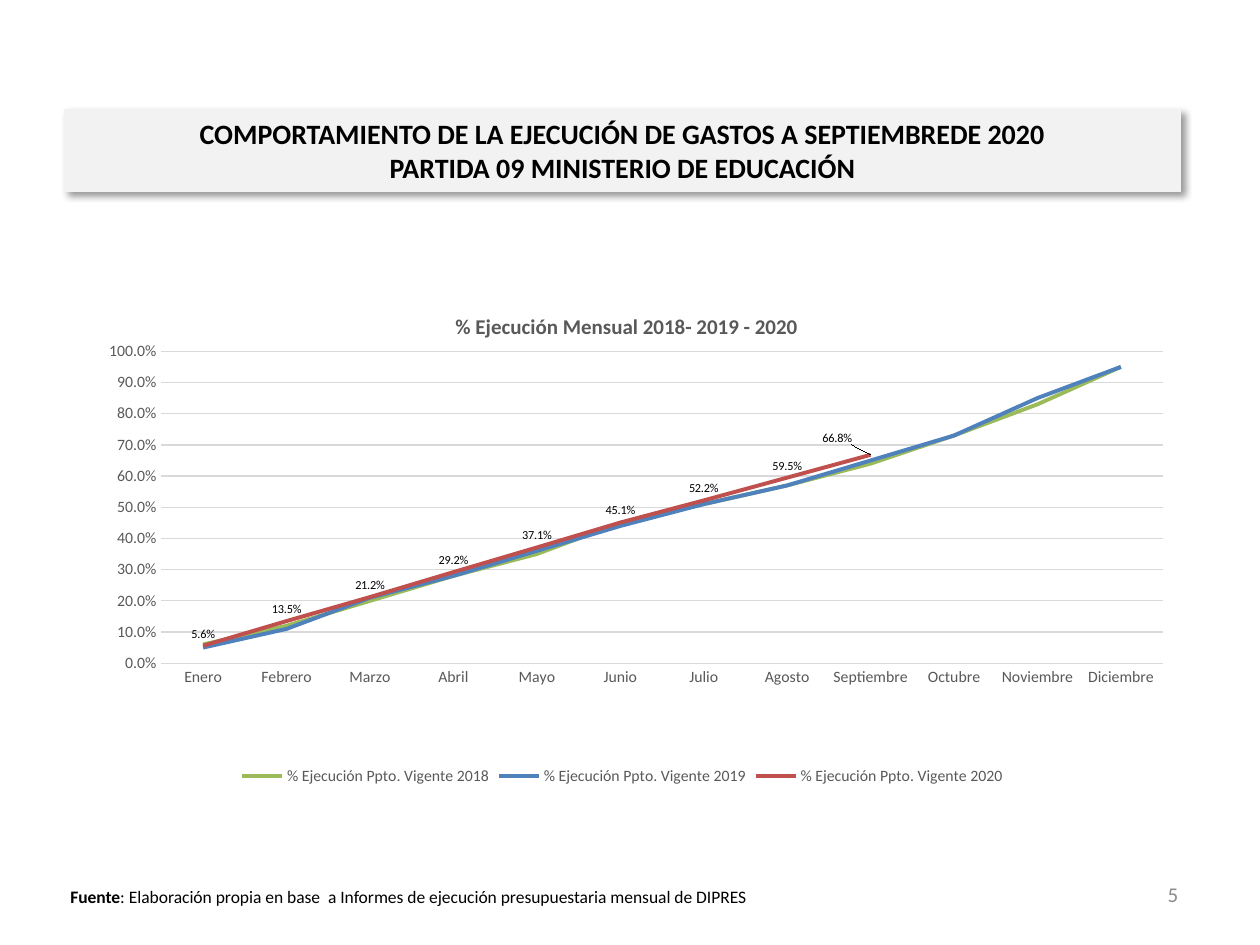
from dataclasses import dataclass

import pptx
import pptx.chart.data
import pptx.dml.color
import pptx.enum.chart
import pptx.enum.text
import pptx.oxml
import pptx.oxml.ns
import pptx.util
from pptx.util import Inches

RGB = pptx.dml.color.RGBColor.from_string
qn = pptx.oxml.ns.qn


@dataclass(frozen=True)
class Theme:
    font: str = "Calibri"
    ink: str = "000000"
    muted: str = "595959"
    number: str = "8C8C8C"
    band: str = "F2F2F2"
    grid: str = "D9D9D9"
    title_pt: int = 16
    chart_title_pt: int = 12
    number_pt: int = 12
    source_pt: int = 10
    axis_pt: int = 9
    label_pt: int = 7


T = Theme()
PERCENT = "0.0%"
MONTHS = ["Enero", "Febrero", "Marzo", "Abril", "Mayo", "Junio", "Julio",
          "Agosto", "Septiembre", "Octubre", "Noviembre", "Diciembre"]
# year: (line colour, cumulative execution by month)
EXECUTION = {
    2018: ("9BBB59", [0.06, 0.12, 0.2, 0.28, 0.35, 0.45, 0.51, 0.57, 0.64, 0.73, 0.83, 0.95]),
    2019: ("4F81BD", [0.05, 0.11, 0.21, 0.28, 0.36, 0.44, 0.51, 0.57, 0.65, 0.73, 0.85, 0.95]),
    2020: ("C0504D", [0.056, 0.135, 0.212, 0.292, 0.371, 0.451, 0.522, 0.595, 0.668]
           + [None] * 3),
}


def style(font, size, color, bold=False):
    font.name = T.font
    font.size = pptx.util.Pt(size)
    font.color.rgb = RGB(color)
    font.bold = bold


def add_shadow(sp):
    """Soft outer shadow towards the lower right."""
    sp._element.spPr.append(pptx.oxml.parse_xml(
        f'<a:effectLst {pptx.oxml.ns.nsdecls("a")}>'
        '<a:outerShdw blurRad="50800" dist="38100" dir="2700000" algn="tl" rotWithShape="0">'
        f'<a:srgbClr val="{T.ink}"><a:alpha val="40000"/></a:srgbClr>'
        '</a:outerShdw></a:effectLst>'))


def add_title(s, lines):
    sp = s.shapes.title
    sp.left, sp.top, sp.width, sp.height = map(Inches, (0.51, 0.87, 8.86, 0.65))
    sp.fill.solid()
    sp.fill.fore_color.rgb = RGB(T.band)
    sp.line.color.rgb = RGB(T.band)
    sp.line.width = pptx.util.Pt(0.75)
    add_shadow(sp)
    tf = sp.text_frame
    tf.auto_size = pptx.enum.text.MSO_AUTO_SIZE.NONE
    tf.vertical_anchor = pptx.enum.text.MSO_ANCHOR.MIDDLE
    tf.text = "\v".join(lines)
    p = tf.paragraphs[0]
    p.alignment = pptx.enum.text.PP_ALIGN.CENTER
    style(p.font, T.title_pt, T.ink, True)


def add_text(s, box, runs, size, color, align, anchor):
    """Add one line of text; runs are (text, bold) pairs."""
    tf = s.shapes.add_textbox(*map(Inches, box)).text_frame
    tf.word_wrap = True
    tf.vertical_anchor = anchor
    p = tf.paragraphs[0]
    p.alignment = align
    for text, bold in runs:
        r = p.add_run()
        r.text = text
        style(r.font, size, color, bold)


def place(parent, index, target=None, mode="edge", **lengths):
    """Give a chart element a manual layout, as fractions of the chart."""
    for old in parent.findall(qn("c:layout")):
        parent.remove(old)
    inner = f'<c:layoutTarget val="{target}"/>' if target else ""
    if mode == "edge":
        inner += '<c:xMode val="edge"/><c:yMode val="edge"/>'
    inner += "".join(f'<c:{k} val="{v}"/>' for k, v in lengths.items())
    parent.insert(index, pptx.oxml.parse_xml(
        f'<c:layout {pptx.oxml.ns.nsdecls("c")}>'
        f'<c:manualLayout>{inner}</c:manualLayout></c:layout>'))


def format_axes(chart):
    for axis in (chart.category_axis, chart.value_axis):
        axis.major_tick_mark = axis.minor_tick_mark = pptx.enum.chart.XL_TICK_MARK.NONE
        style(axis.tick_labels.font, T.axis_pt, T.muted)
    values = chart.value_axis
    values.tick_labels.number_format = PERCENT
    values.tick_labels.number_format_is_linked = False
    values.format.line.fill.background()
    for line in (chart.category_axis.format.line, values.major_gridlines.format.line):
        line.color.rgb = RGB(T.grid)
        line.width = pptx.util.Pt(0.75)


def label_series(series, last):
    """Show the values above the line, the last one moved up and left."""
    labels = series.data_labels
    labels.show_value = True
    labels.number_format = PERCENT
    labels.number_format_is_linked = False
    end = series.points[last].data_label
    for label in (labels, end):
        label.position = pptx.enum.chart.XL_LABEL_POSITION.ABOVE
        style(label.font, T.label_pt, T.ink)
    place(series._element.find(".//" + qn("c:dLbl")), 1, mode="factor", x=-0.03, y=-0.01)


def add_execution_chart(s):
    data = pptx.chart.data.CategoryChartData(number_format=PERCENT)
    data.categories = MONTHS
    for year, (_, values) in EXECUTION.items():
        data.add_series(f"% Ejecución Ppto. Vigente {year}", values)
    chart = s.shapes.add_chart(pptx.enum.chart.XL_CHART_TYPE.LINE,
                               *map(Inches, (0.51, 2.25, 8.86, 4.02)), data).chart
    style(chart.font, 10, T.ink)

    p = chart.chart_title.text_frame.paragraphs[0]
    p.text = "% Ejecución Mensual 2018- 2019 - 2020"
    style(p.font, T.chart_title_pt, T.muted, True)
    place(chart.chart_title._element, 1, x=0.347, y=0.05)

    chart.has_legend = True
    chart.legend.position = pptx.enum.chart.XL_LEGEND_POSITION.BOTTOM
    chart.legend.include_in_layout = False
    style(chart.legend.font, T.axis_pt, T.muted)

    format_axes(chart)
    place(chart._chartSpace.chart.plotArea, 0, "inner", x=0.087, y=0.134, w=0.897, h=0.616)
    for series, (color, _) in zip(chart.series, EXECUTION.values()):
        series.smooth = False
        series.marker.style = pptx.enum.chart.XL_MARKER_STYLE.NONE
        series.format.line.color.rgb = RGB(color)
        series.format.line.width = pptx.util.Pt(2.25)
    label_series(chart.series[2], MONTHS.index("Septiembre"))


def main():
    prs = pptx.Presentation()
    prs.slide_width, prs.slide_height = Inches(10), Inches(7.5)
    s = prs.slides.add_slide(prs.slide_layouts[5])
    align, anchor = pptx.enum.text.PP_ALIGN, pptx.enum.text.MSO_ANCHOR
    add_text(s, (0.46, 6.98, 8.58, 0.27),
             [("Fuente", True),
              (": Elaboración propia en base  a Informes de ejecución "
               "presupuestaria mensual de DIPRES", False)],
             T.source_pt, T.ink, align.LEFT, anchor.TOP)
    add_text(s, (7.12, 6.9, 2.33, 0.4), [("5", False)],
             T.number_pt, T.number, align.RIGHT, anchor.MIDDLE)
    add_title(s, ["COMPORTAMIENTO DE LA EJECUCIÓN DE GASTOS A SEPTIEMBREDE 2020",
                  "PARTIDA 09 MINISTERIO DE EDUCACIÓN"])
    add_execution_chart(s)
    prs.save("out.pptx")


if __name__ == "__main__":
    main()
